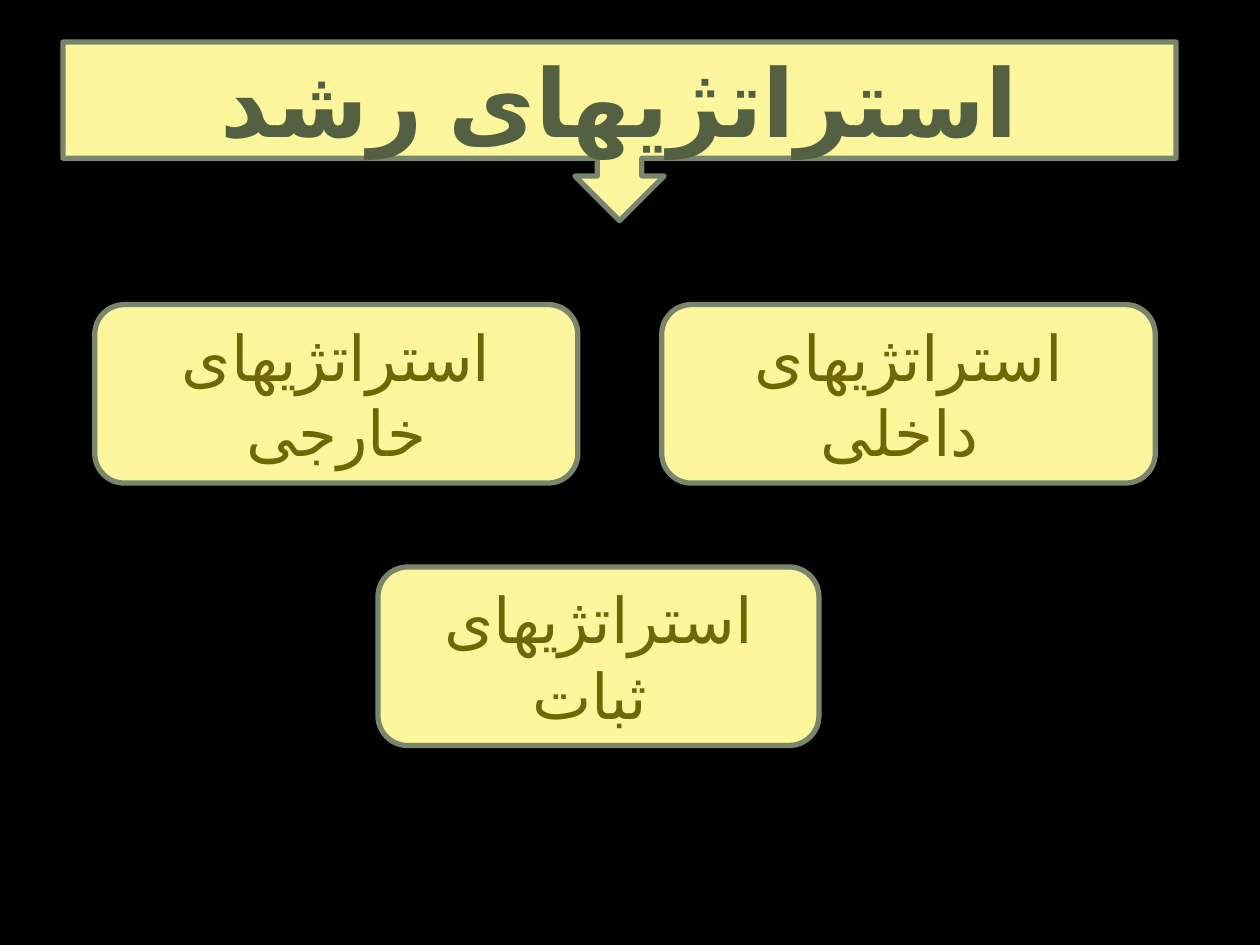
from lxml.etree import SubElement
from pptx import Presentation
from pptx.dml.color import RGBColor as Rgb
from pptx.enum.shapes import MSO_SHAPE as Shape
from pptx.enum.text import MSO_ANCHOR as Anchor, PP_ALIGN as Align
from pptx.oxml.ns import qn
from pptx.util import Cm, Pt

COLOURS = {
    "background": "000000",
    "panel": "FDF69C",
    "border": "7A866C",
    "title": "536142",
    "label": "706702",
}
ARABIC_FONT = "Arial"
TITLE_FORMAT = {"name": "Arial", "size": Pt(54), "bold": True}
LABEL_FORMAT = {"name": "TeX Gyre Pagella", "size": Pt(36), "bold": False}
PANEL_HEIGHT = 3.6
UPPER_ROW, LOWER_ROW = 6.14, 11.43
STRATEGIES = [
    ("استراتژیهای خارجی", (1.91, UPPER_ROW, 9.74, PANEL_HEIGHT)),
    ("استراتژیهای ثبات ", (7.62, LOWER_ROW, 8.89, PANEL_HEIGHT)),
    ("استراتژیهای داخلی ", (13.34, UPPER_ROW, 9.95, PANEL_HEIGHT)),
]


def colour(name):
    return Rgb.from_string(COLOURS[name])


def add_panel(page, kind, bounds, text, text_colour, font_format):
    panel = page.shapes.add_shape(kind, *map(Cm, bounds))
    panel.shadow.inherit = False
    panel.fill.solid()
    panel.fill.fore_color.rgb = colour("panel")
    panel.line.color.rgb = colour("border")
    panel.line.width = Pt(3)
    frame = panel.text_frame
    frame.word_wrap = True
    frame.vertical_anchor = Anchor.MIDDLE
    para = frame.paragraphs[0]
    para.alignment = Align.CENTER
    span = para.add_run()
    span.text = text
    for attribute, value in font_format.items():
        setattr(span.font, attribute, value)
    span.font.color.rgb = colour(text_colour)
    properties = span._r.get_or_add_rPr()
    properties.set("lang", "fa-IR")
    SubElement(properties, qn("a:cs"), typeface=ARABIC_FONT)


def add_title(page, bounds):
    add_panel(page, Shape.DOWN_ARROW_CALLOUT, bounds,
              "استراتژیهای رشد", "title", TITLE_FORMAT)


def add_strategies(page):
    for text, bounds in STRATEGIES:
        add_panel(page, Shape.ROUNDED_RECTANGLE, bounds,
                  text, "label", LABEL_FORMAT)


def main():
    deck = Presentation()
    deck.slide_width, deck.slide_height = Cm(25.4), Cm(19.05)
    page = deck.slides.add_slide(deck.slide_layouts[6])
    page.background.fill.solid()
    page.background.fill.fore_color.rgb = colour("background")
    add_title(page, (1.27, 0.85, 22.44, PANEL_HEIGHT))
    add_strategies(page)
    deck.save("out.pptx")


if __name__ == "__main__":
    main()
